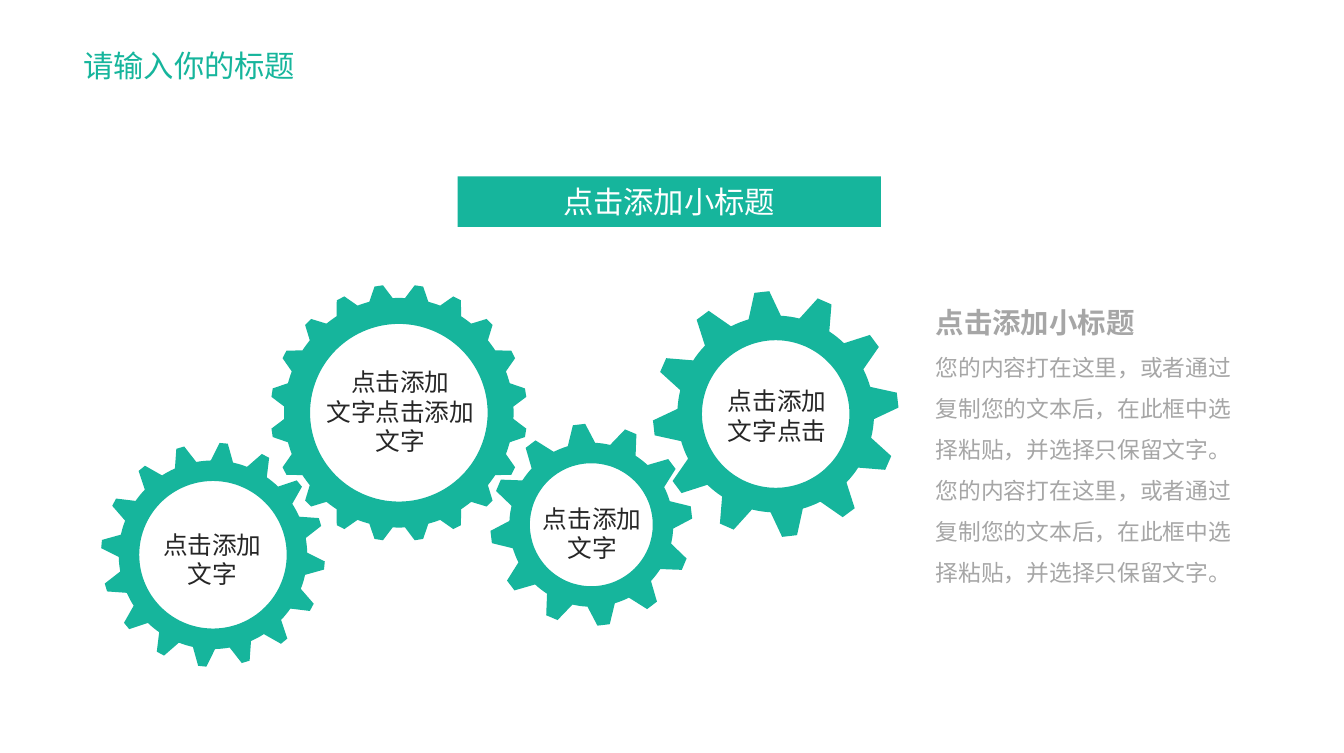
from math import cos, radians, sin

from lxml import etree
from pptx import Presentation
from pptx.dml.color import RGBColor
from pptx.enum.shapes import MSO_SHAPE
from pptx.enum.text import MSO_ANCHOR, MSO_AUTO_SIZE, PP_ALIGN
from pptx.oxml.ns import qn
from pptx.util import Inches, Pt

LEFT, CENTER = PP_ALIGN.LEFT, PP_ALIGN.CENTER
TOP, MIDDLE = MSO_ANCHOR.TOP, MSO_ANCHOR.MIDDLE
NO_FIT = MSO_AUTO_SIZE.NONE
RECTANGLE = MSO_SHAPE.RECTANGLE

FONT = "Noto Sans CJK SC"
COLORS = {"green": "16B59C", "dark": "262626", "gray": "A6A6A6", "white": "FFFFFF"}


def write(sp, box, lines, color, size, align=CENTER, anchor=MIDDLE, spacing=1.0, inset=(0.07, 0.04)):
    """Place a shape and fill it with lines; the size may be one per line."""
    sp.left, sp.top, sp.width, sp.height = [Inches(v) for v in box]
    tf = sp.text_frame
    dx, dy = [Inches(v) for v in inset]
    frame_format = {"word_wrap": True, "auto_size": NO_FIT, "vertical_anchor": anchor,
                    "margin_left": dx, "margin_right": dx, "margin_top": dy, "margin_bottom": dy}
    for name, value in frame_format.items():
        setattr(tf, name, value)
    sizes = size if isinstance(size, list) else [size] * len(lines)
    for i, (line, points) in enumerate(zip(lines, sizes)):
        p = tf.paragraphs[0] if i == 0 else tf.add_paragraph()
        p.alignment, p.line_spacing, p.space_before = align, spacing, Pt(0)
        r = p.add_run()
        r.text = line
        font_format = {"name": FONT, "size": Pt(points), "bold": len(sizes) > 1 and points > sizes[-1]}
        for name, value in font_format.items():
            setattr(r.font, name, value)
        r.font.color.rgb = RGBColor.from_string(COLORS[color])
        etree.SubElement(r.font._element, qn("a:ea")).set("typeface", FONT)


def ring(cx, cy, polar):
    """Turn (radius, clockwise degrees from the top) into slide points."""
    return [(Inches(cx + r * sin(radians(a))), Inches(cy - r * cos(radians(a)))) for r, a in polar]


prs = Presentation()
prs.slide_width, prs.slide_height = Inches(9.84), Inches(5.51)
s = prs.slides.add_slide(prs.slide_layouts[1])

# Title
write(s.shapes.title, (0.51, 0.16, 2.12, 0.5), ["请输入你的标题"], "green", 16,
      LEFT, TOP, 1.5, (0.1, 0.05))

# Body text at the right, without bullets
body = s.placeholders[1]
content = "您的内容打在这里，或者通过复制您的文本后，在此框中选择粘贴，并选择只保留文字。"
write(body, (6.78, 2.07, 2.32, 2.27), ["点击添加小标题", content, content], "gray",
      [15, 12, 12], LEFT, TOP, 1.5)
for p in body.text_frame.paragraphs:
    pPr = p._p.get_or_add_pPr()
    pPr.set("marL", "0")
    pPr.set("indent", "0")
    etree.SubElement(pPr, qn("a:buNone"))

# Gears: centre, hole, root and tip radii, tooth count, first tooth angle,
# half angles of a tooth at tip and root, then label box and label lines
gears = [
    (2.92, 3.02, 0.65, 0.84, 0.94, 20, 9, 1.9, 5.9,
     (2.29, 2.64, 1.28, 0.74), ["点击添加", "文字点击添加", "文字"]),
    (4.33, 3.84, 0.45, 0.6, 0.74, 12, -7, 3.5, 9.7,
     (3.88, 3.64, 0.91, 0.52), ["点击添加", "文字"]),
    (1.56, 4.06, 0.54, 0.69, 0.82, 16, 5.5, 2.1, 6.8,
     (1.1, 3.83, 0.91, 0.52), ["点击添加", "文字"]),
    (5.68, 3.03, 0.54, 0.72, 0.9, 12, -6.5, 3.5, 9.5,
     (5.05, 2.78, 1.28, 0.52), ["点击添加", "文字点击"]),
]
for cx, cy, hole, root, tip, teeth, start, tip_half, root_half, box, label in gears:
    pitch = 360 / teeth
    valley = pitch - 2 * root_half
    polar = []
    for n in range(teeth):
        a = start + n * pitch
        polar += [(tip, a - tip_half), (tip, a + tip_half)]
        polar += [(root, a + root_half + valley * k / 4) for k in range(5)]
    outline = ring(cx, cy, polar)
    inner = ring(cx, cy, [(hole, -3 * k) for k in range(120)])
    builder = s.shapes.build_freeform(*outline[0])
    builder.add_line_segments(outline[1:], close=True)
    builder.move_to(*inner[0])
    builder.add_line_segments(inner[1:], close=True)
    gear = builder.convert_to_shape()
    gear.shadow.inherit = False
    gear.fill.solid()
    gear.fill.fore_color.rgb = RGBColor.from_string(COLORS["green"])
    gear.line.fill.background()
    write(s.shapes.add_textbox(0, 0, 0, 0), box, label, "dark", 13)

# Banner
banner = s.shapes.add_shape(RECTANGLE, 0, 0, 0, 0)
banner.shadow.inherit = False
banner.fill.solid()
banner.fill.fore_color.rgb = RGBColor.from_string(COLORS["green"])
banner.line.fill.background()
write(banner, (3.35, 1.29, 3.1, 0.37), ["点击添加小标题"], "white", 16)

prs.save("out.pptx")
